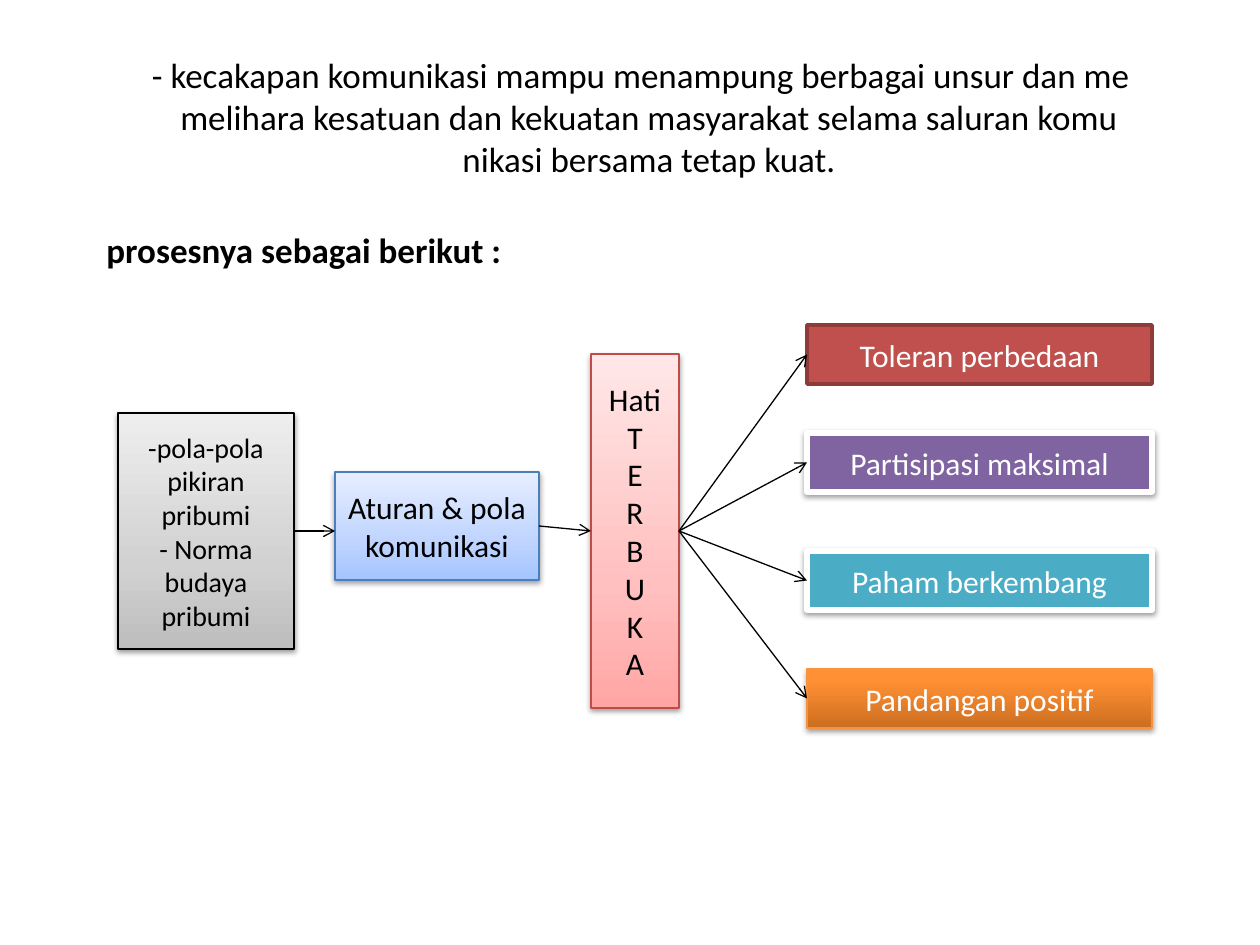
from dataclasses import dataclass
from typing import NamedTuple

from lxml.etree import SubElement
from pptx import Presentation
from pptx.dml.color import RGBColor
from pptx.enum.shapes import MSO_CONNECTOR as Link, MSO_SHAPE as Shape
from pptx.enum.text import MSO_ANCHOR as Anchor, PP_ALIGN as Align
from pptx.oxml.ns import qn
from pptx.util import Pt

SCALE = 914400 / 126  # EMU per px
TOP, LEFT, BOTTOM, RIGHT = range(4)  # connection sites of a rectangle


@dataclass(frozen=True)
class Theme:
    font: str = "Calibri"
    heading_size: int = 20
    label_size: int = 18
    small_size: int = 16
    black: str = "000000"
    white: str = "FFFFFF"
    red: str = "C0504D"
    red_line: str = "8E3B39"
    purple: str = "8064A2"
    teal: str = "4BACC6"
    blue_line: str = "4B7EBC"
    rose_line: str = "BF4C48"
    orange_line: str = "F69240"
    grey_blend: tuple = ((0, "BDBDBD"), (35, "D1D1D1"), (100, "EEEEEE"))
    blue_blend: tuple = ((0, "A4C4FF"), (35, "BFD4FF"), (100, "E6EEFF"))
    rose_blend: tuple = ((0, "FFA6A5"), (35, "FFC0BF"), (100, "FFE7E7"))
    orange_blend: tuple = ((0, "CC6E20"), (80, "FF9034"), (100, "FF9136"))


class Box(NamedTuple):
    left: int
    top: int
    width: int
    height: int

    def inner(self, left, top, width, height):
        return Box(self.left + left, self.top + top, width, height)

    def emu(self):
        return [px(value) for value in self]


THEME = Theme()


def px(value):
    return round(value * SCALE)


def color(value):
    return RGBColor.from_string(value)


def write(frame, lines, size, ink, align, bold=False):
    frame.word_wrap = True
    frame.text = "\n".join(lines)
    for para in frame.paragraphs:
        para.alignment = align
        para.font.name = THEME.font
        para.font.size = Pt(size)
        para.font.bold = bold
        para.font.color.rgb = color(ink)


def blend_fill(shape, stops):
    """Fill a shape with a gradient that runs from the bottom up."""
    shape.fill.background()
    properties = shape.fill._xPr
    empty = properties.find(qn("a:noFill"))
    blend = SubElement(properties, qn("a:gradFill"), rotWithShape="1")
    stop_list = SubElement(blend, qn("a:gsLst"))
    for position, value in stops:
        stop = SubElement(stop_list, qn("a:gs"), pos=str(position * 1000))
        SubElement(stop, qn("a:srgbClr"), val=value)
    SubElement(blend, qn("a:lin"), ang="16200000", scaled="0")
    properties.replace(empty, blend)


def add_shadow(shape):
    effects = shape._element.spPr.find(qn("a:effectLst"))
    shadow = SubElement(effects, qn("a:outerShdw"), blurRad="40000",
                        dist="20000", dir="5400000", rotWithShape="0")
    tint = SubElement(shadow, qn("a:srgbClr"), val=THEME.black)
    SubElement(tint, qn("a:alpha"), val="38000")


def add_block(page, box, lines, fill, line, line_width=0.75,
              ink=THEME.black, size=THEME.label_size, shadow=True):
    block = page.shapes.add_shape(Shape.RECTANGLE, *box.emu())
    block.shadow.inherit = False
    if isinstance(fill, str):
        block.fill.solid()
        block.fill.fore_color.rgb = color(fill)
    else:
        blend_fill(block, fill)
    block.line.color.rgb = color(line)
    block.line.width = Pt(line_width)
    if shadow:
        add_shadow(block)
    block.text_frame.vertical_anchor = Anchor.MIDDLE
    write(block.text_frame, lines, size, ink, Align.CENTER)
    return block


def add_arrow(page, start, end, join_end=True):
    """Arrow from the right side of one block to the left side of another."""
    middle = start.top + start.height // 2
    arrow = page.shapes.add_connector(
        Link.STRAIGHT, start.left + start.width, middle, end.left, middle)
    arrow.begin_connect(start, RIGHT)
    if join_end:
        arrow.end_connect(end, LEFT)
    arrow.line.color.rgb = color(THEME.black)
    arrow.line.width = Pt(0.75)
    SubElement(arrow.line._get_or_add_ln(), qn("a:tailEnd"), type="arrow")
    SubElement(arrow._element.spPr, qn("a:effectLst"))


def add_heading(page, box):
    # Title with a hanging first line
    title = page.shapes.title
    title.left, title.top, title.width, title.height = box.inner(0, 0, 1134, 157).emu()
    title.text_frame.vertical_anchor = Anchor.MIDDLE
    write(title.text_frame, [
        "- kecakapan komunikasi mampu menampung berbagai unsur dan me\v"
        "melihara kesatuan dan kekuatan masyarakat selama saluran komu\v"
        "nikasi bersama tetap kuat."],
        THEME.heading_size, THEME.black, Align.CENTER)
    indent = title.text_frame.paragraphs[0]._p.get_or_add_pPr()
    indent.set("marL", str(px(38)))
    indent.set("indent", str(px(-16)))

    # Lead-in to the diagram
    lead = page.shapes.add_textbox(*box.inner(31, 184, 1103, 56).emu())
    write(lead.text_frame, ["prosesnya sebagai berikut :"],
          THEME.heading_size, THEME.black, Align.LEFT, bold=True)


def add_process(page, box):
    # Three stages
    patterns = add_block(page, box.inner(0, 88, 176, 236),
                         ["-pola-pola pikiran pribumi", "- Norma budaya pribumi"],
                         THEME.grey_blend, THEME.black, size=THEME.small_size)
    rules = add_block(page, box.inner(217, 147, 204, 108), ["Aturan & pola komunikasi"],
                      THEME.blue_blend, THEME.blue_line)
    open_heart = add_block(page, box.inner(473, 29, 88, 354), ["Hati", *"TERBUKA"],
                           THEME.rose_blend, THEME.rose_line)
    add_arrow(page, patterns, rules, join_end=False)
    add_arrow(page, rules, open_heart)

    # Outcomes
    outcomes = (
        (0, "Toleran perbedaan", THEME.red, THEME.red_line, 2, False),
        (108, "Partisipasi maksimal", THEME.purple, THEME.white, 3, True),
        (226, "Paham berkembang", THEME.teal, THEME.white, 3, True),
        (344, "Pandangan positif", THEME.orange_blend, THEME.orange_line, 0.75, True),
    )
    for top, label, fill, line, line_width, shadow in outcomes:
        outcome = add_block(page, box.inner(689, top, 345, 59), [label], fill, line,
                            line_width, ink=THEME.white, shadow=shadow)
        add_arrow(page, open_heart, outcome)


def main():
    deck = Presentation()
    deck.slide_width, deck.slide_height = px(1260), px(945)
    page = deck.slides.add_slide(deck.slide_layouts[5])
    add_heading(page, Box(63, 38, 1134, 240))
    add_process(page, Box(118, 325, 1034, 403))
    deck.save("out.pptx")


if __name__ == "__main__":
    main()
